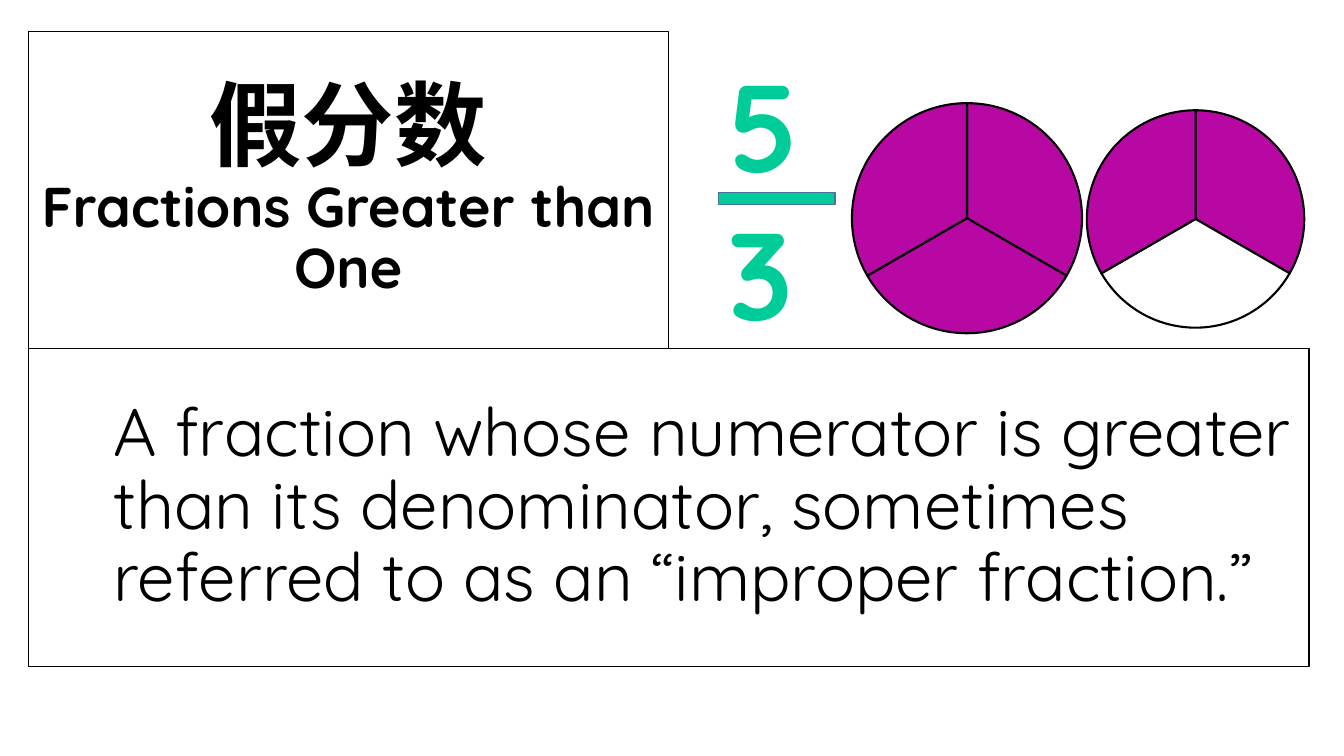
"""Build a vocabulary slide about fractions greater than one."""
from lxml import etree
from pptx import Presentation
from pptx.chart.data import CategoryChartData
from pptx.dml.color import RGBColor
from pptx.enum.chart import XL_CHART_TYPE as ChartType
from pptx.enum.shapes import MSO_SHAPE as Preset
from pptx.enum.text import MSO_ANCHOR as Anchor, PP_ALIGN as Align
from pptx.oxml import parse_xml
from pptx.oxml.ns import nsdecls
from pptx.util import Cm, Pt

BLACK, GREEN, PURPLE, WHITE = "000000", "00CC99", "B808A3", "FFFFFF"
TERM = [("假分数", "Lato", 66), ("Fractions Greater than One", "Quicksand", 40)]
DEFINITION = ("A fraction whose numerator is greater than its denominator, "
              "sometimes referred to as an “improper fraction.”")
NUMERATOR, DENOMINATOR = "5", "3"
THIRDS = {"1": 33, "2": 33, "3": 33}
PIES = [
    {"centre": (24.37, 5.5), "frame": (8.23, 6.48), "diameter": 5.8,
     "colours": [PURPLE, PURPLE, PURPLE]},
    {"centre": (30.13, 5.52), "frame": (8.23, 6.17), "diameter": 5.48,
     "colours": [PURPLE, WHITE, PURPLE]},
]
LEFT, TOP, ROW_HEIGHT = 0.71, 0.79, 8
TERM_WIDTH, DEFINITION_WIDTH = 16.13, 32.28


def rgb(colour):
    return RGBColor.from_string(colour)


def style(font, colour, bold, name=None, size=None):
    font.color.rgb, font.bold = rgb(colour), bold
    if name:
        font.name, font.size = name, Pt(size)


def add_panel(slide, top, width):
    panel = slide.shapes.add_shape(
        Preset.RECTANGLE, Cm(LEFT), Cm(top), Cm(width), Cm(ROW_HEIGHT))
    panel.shadow.inherit = False
    panel.fill.background()
    panel.line.color.rgb, panel.line.width = rgb(BLACK), Pt(0.75)
    panel.text_frame.word_wrap = True
    panel.text_frame.vertical_anchor = Anchor.MIDDLE
    paragraph = panel.text_frame.paragraphs[0]
    paragraph.line_spacing = 0.9
    return paragraph


def add_term(slide):
    term = add_panel(slide, TOP, TERM_WIDTH)
    term.alignment = Align.CENTER
    style(term.font, BLACK, True)
    for index, (words, name, size) in enumerate(TERM):
        if index:
            term.add_line_break()
        run = term.add_run()
        run.text = words
        style(run.font, BLACK, True, name, size)


def add_definition(slide):
    definition = add_panel(slide, TOP + ROW_HEIGHT, DEFINITION_WIDTH)
    definition.text = DEFINITION
    definition.alignment = Align.LEFT
    definition._p.get_or_add_pPr().set("marL", str(Cm(1.9)))
    style(definition.font, BLACK, False, "Quicksand", 48)


def add_fraction(slide):
    digits = slide.shapes.add_textbox(Cm(18.11), Cm(1.12), Cm(3.63), Cm(7.77)).text_frame
    digits.word_wrap = True
    digits.text = f"{NUMERATOR}\n{DENOMINATOR}"
    for digit in digits.paragraphs:
        style(digit.font, GREEN, True, "Quicksand", 88)
    bar = slide.shapes.add_shape(Preset.MATH_MINUS, Cm(17.58), Cm(4.34), Cm(3.99), Cm(1.32))
    bar.shadow.inherit = False
    bar.fill.solid()
    bar.fill.fore_color.rgb = rgb(GREEN)
    bar.line.color.rgb, bar.line.width = rgb("43739E"), Pt(1)


def place_circle(chart, frame, diameter):
    width, height = (diameter / side for side in frame)
    values = {"layoutTarget": "inner", "xMode": "edge", "yMode": "edge",
              "x": (1 - width) / 2, "y": (1 - height) / 2, "w": width, "h": height}
    plot_area = chart._chartSpace.chart.plotArea
    for old in plot_area.xpath("c:layout"):
        plot_area.remove(old)
    layout = parse_xml(f"<c:layout {nsdecls('c')}><c:manualLayout/></c:layout>")
    for tag, value in values.items():
        text = value if isinstance(value, str) else f"{value:.4f}"
        etree.SubElement(layout[0], layout.tag.replace("layout", tag)).set("val", text)
    plot_area.insert(0, layout)


def add_pie(slide, centre, frame, diameter, colours):
    data = CategoryChartData()
    data.categories = list(THIRDS)
    data.add_series("Series 1", list(THIRDS.values()))
    left, top = (middle - side / 2 for middle, side in zip(centre, frame))
    chart = slide.shapes.add_chart(
        ChartType.PIE, Cm(left), Cm(top), Cm(frame[0]), Cm(frame[1]), data).chart
    chart.has_legend = chart.has_title = False
    chart.font.name, chart.font.size = "Calibri", Pt(10)
    chart.font.color.rgb = rgb(BLACK)
    chart.plots[0].vary_by_categories = False
    chart._chartSpace.chart.addnext(parse_xml(
        f"<c:spPr {nsdecls('c', 'a')}><a:noFill/><a:ln><a:noFill/></a:ln></c:spPr>"))
    place_circle(chart, frame, diameter)
    for index, colour in enumerate(colours):
        third = chart.plots[0].series[0].points[index].format
        third.fill.solid()
        third.fill.fore_color.rgb = rgb(colour)
        third.line.color.rgb, third.line.width = rgb(BLACK), Pt(1.5)


def main():
    deck = Presentation()
    deck.slide_width, deck.slide_height = Cm(33.87), Cm(19.05)
    slide = deck.slides.add_slide(deck.slide_layouts[6])
    add_term(slide)
    add_definition(slide)
    add_fraction(slide)
    for pie in PIES:
        add_pie(slide, **pie)
    deck.save("out.pptx")


if __name__ == "__main__":
    main()
